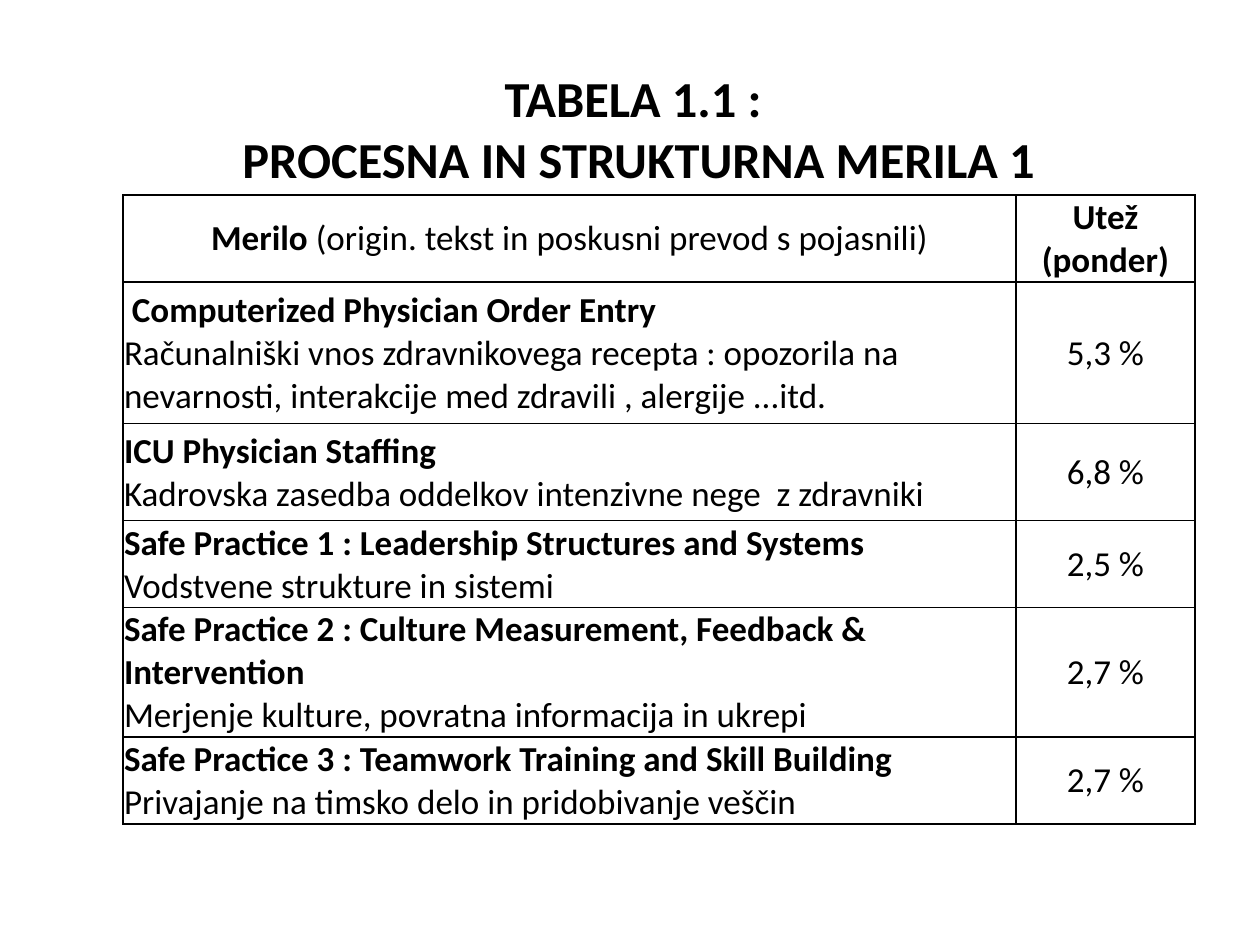
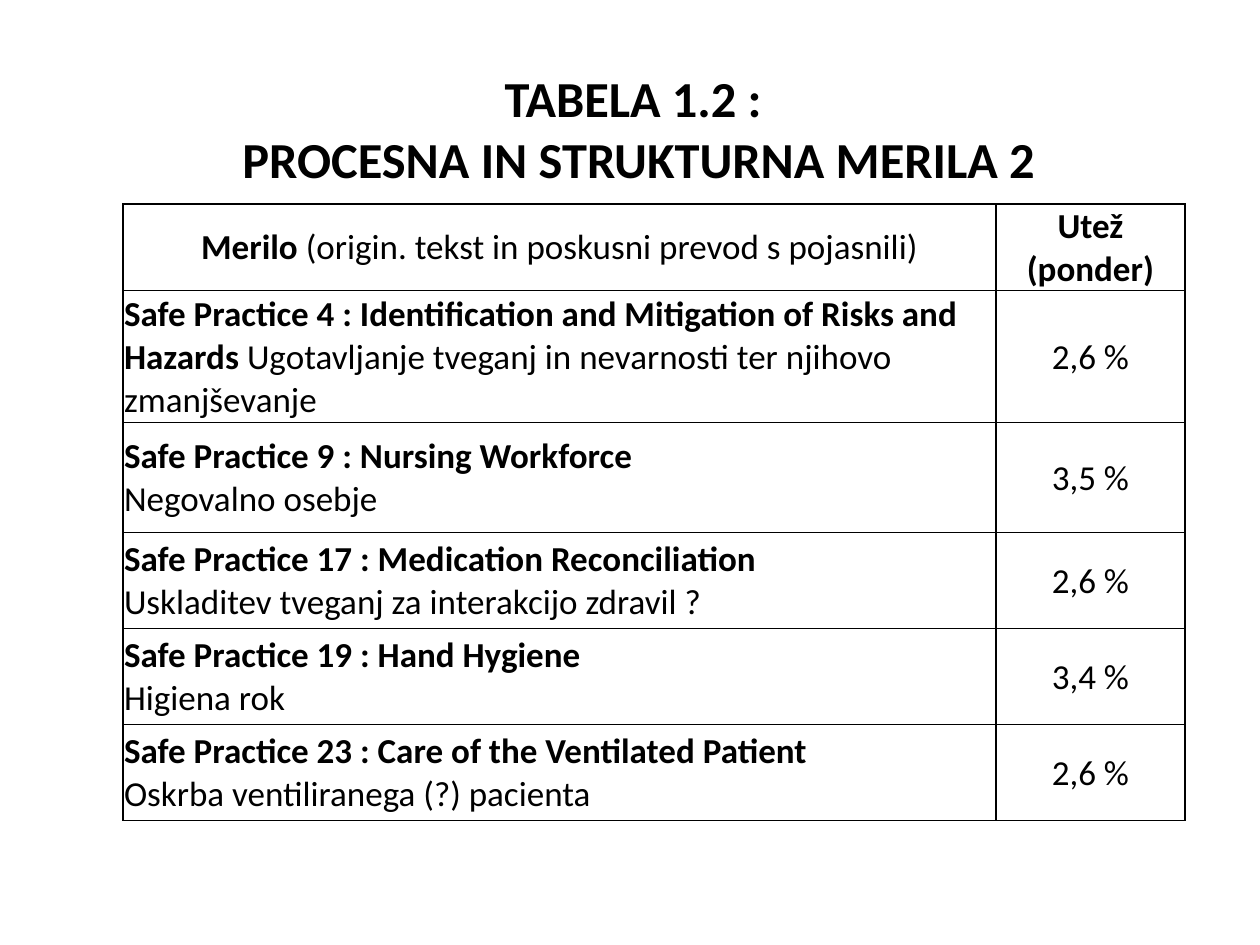
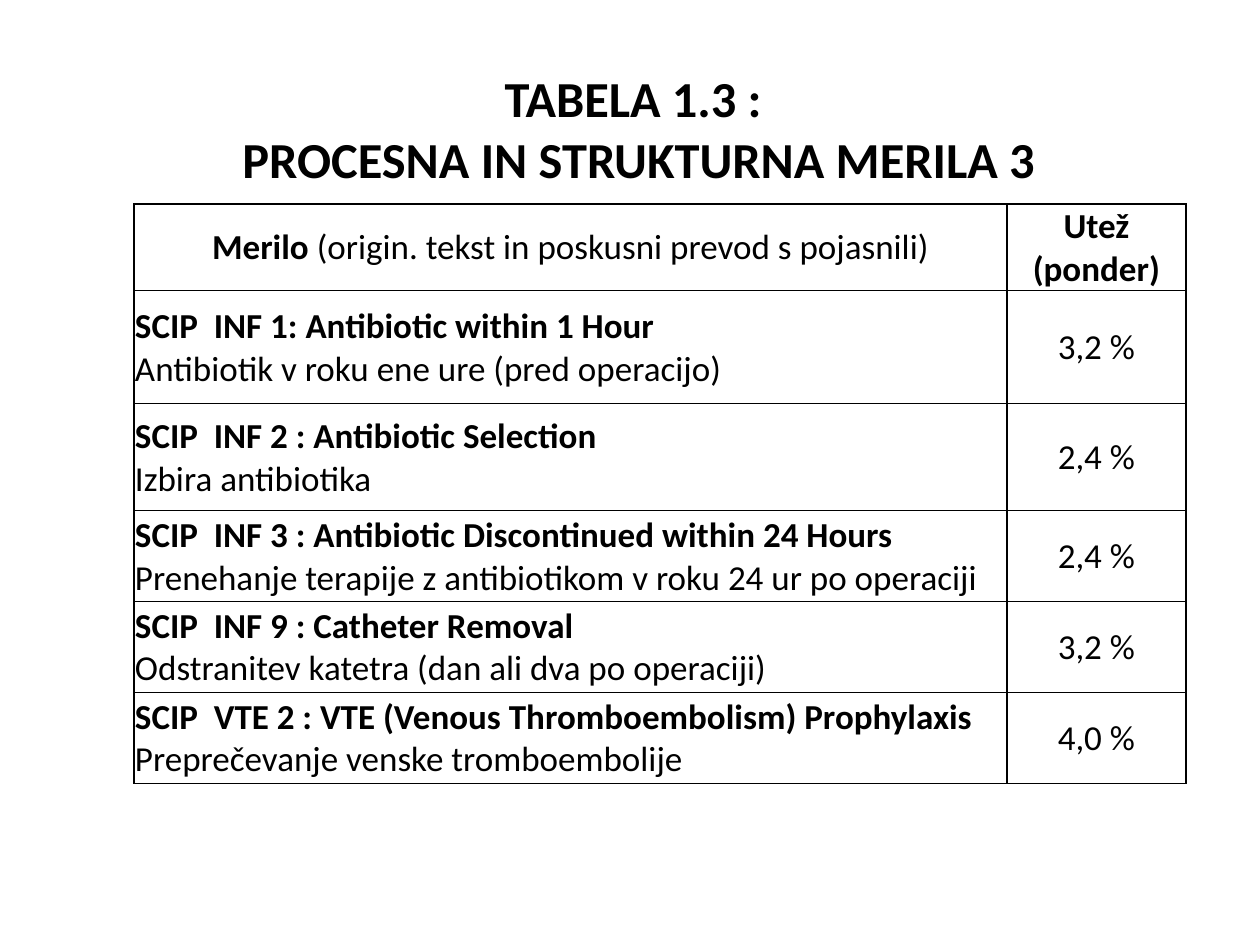
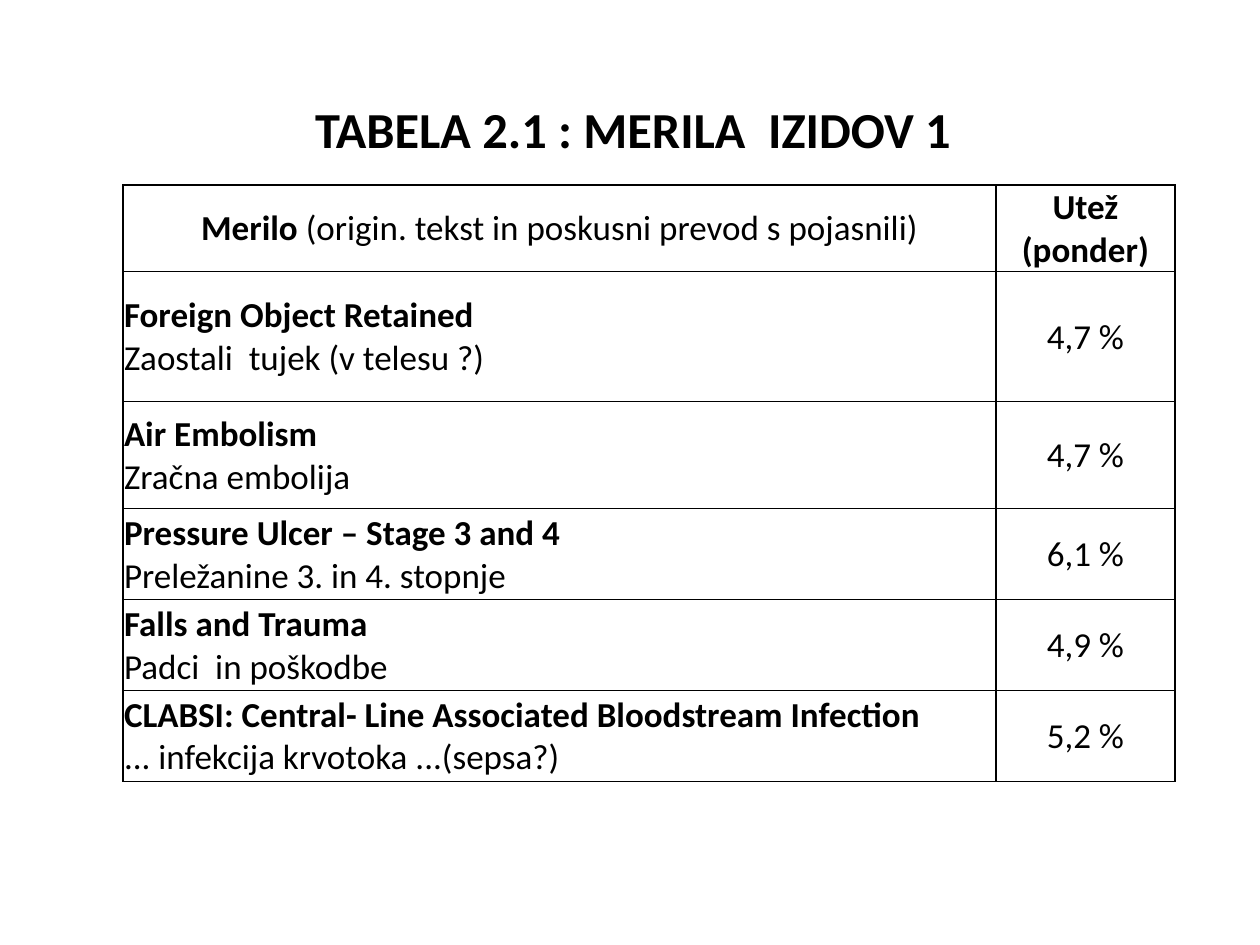
"""Build four slides of weighted hospital safety criteria tables."""
import lxml.etree
import pptx
import pptx.dml.color
import pptx.enum.text
import pptx.oxml.ns
import pptx.util

PX = pptx.util.Inches(1) / 126
FONT = "Calibri"
BLACK = "000000"
CENTER = pptx.enum.text.PP_ALIGN.CENTER
LEFT = pptx.enum.text.PP_ALIGN.LEFT
MIDDLE = pptx.enum.text.MSO_ANCHOR.MIDDLE


def px(length):
    return pptx.util.Emu(round(length * PX))


def color(code):
    return pptx.dml.color.RGBColor.from_string(code)


class Deck:
    def __init__(self):
        self.presentation = pptx.Presentation()
        self.presentation.slide_width = px(1260)
        self.presentation.slide_height = px(945)
        self.slide = None

    def add_slide(self):
        title_only = self.presentation.slide_layouts[5]
        self.slide = self.presentation.slides.add_slide(title_only)

    def style(self, paragraph, size, align, bold=None):
        paragraph.alignment = align
        font = paragraph.font
        font.name, font.size, font.bold = FONT, pptx.util.Pt(size), bold
        font.color.rgb = color(BLACK)

    def title(self, text):
        heading = self.slide.shapes.title
        heading.left, heading.top = px(54), px(94)
        heading.width, heading.height = px(1170), px(68)
        frame = heading.text_frame
        frame.text = text
        frame.auto_size = pptx.enum.text.MSO_AUTO_SIZE.NONE
        frame.vertical_anchor = MIDDLE
        self.style(frame.paragraphs[0], 28.8, CENTER, True)

    def borders(self, cell):
        properties = cell._tc.get_or_add_tcPr()
        qn = pptx.oxml.ns.qn
        for side in ("a:lnL", "a:lnR", "a:lnT", "a:lnB"):
            line = lxml.etree.SubElement(properties, qn(side), w=str(pptx.util.Pt(1)))
            fill = lxml.etree.SubElement(line, qn("a:solidFill"))
            lxml.etree.SubElement(fill, qn("a:srgbClr"), val=BLACK)

    def cell(self, cell, paragraphs, align):
        self.borders(cell)
        cell.fill.background()
        cell.vertical_anchor = MIDDLE
        cell.margin_left = cell.margin_right = cell.margin_top = px(1)
        cell.margin_bottom = 0
        frame = cell.text_frame
        for index, runs in enumerate(paragraphs):
            paragraph = frame.add_paragraph() if index else frame.paragraphs[0]
            shared = runs[0][1] if len(runs) == 1 else None
            self.style(paragraph, 20, align, shared)
            for text, bold in runs:
                run = paragraph.add_run()
                run.text = text
                if shared is None:
                    run.font.bold = bold

    def table(self, left, top, height, widths, heights, criteria):
        frame = self.slide.shapes.add_table(
            len(heights), len(widths), px(left), px(top), px(sum(widths)), px(height))
        table = frame.table
        table.first_row = table.horz_banding = False
        for column, width in zip(table.columns, widths):
            column.width = px(width)
        for row, row_height in zip(table.rows, heights):
            row.height = px(row_height)
        frame.height = px(height)
        for index, (criterion, weight) in enumerate([HEADER] + criteria):
            self.cell(table.cell(index, 0), criterion, LEFT if index else CENTER)
            self.cell(table.cell(index, 1), [[(weight, index == 0)]], CENTER)


def entry(english, slovene, weight):
    return [[(english, True)], [(slovene, False)]], weight


def inline_entry(english, slovene, weight):
    return [[(english, True), (slovene, False)]], weight


HEADER = inline_entry(
    "Merilo ", "(origin. tekst in poskusni prevod s pojasnili)", "Utež (ponder)")

TABLES = [
    ("TABELA 1.1 : \vPROCESNA IN STRUKTURNA MERILA 1",
     123, 195, 625, (893, 179), (50, 142, 97, 83, 83, 83), [
         entry(" Computerized Physician Order Entry",
               "Računalniški vnos zdravnikovega recepta : opozorila na nevarnosti, "
               "interakcije med zdravili , alergije ...itd.", "5,3 %"),
         entry("ICU Physician Staffing",
               "Kadrovska zasedba oddelkov intenzivne nege  z zdravniki", "6,8 %"),
         entry("Safe Practice 1 : Leadership Structures and Systems",
               "Vodstvene strukture in sistemi", "2,5 %"),
         entry("Safe Practice 2 : Culture Measurement, Feedback & Intervention",
               "Merjenje kulture, povratna informacija in ukrepi", "2,7 %"),
         entry("Safe Practice 3 : Teamwork Training and Skill Building",
               "Privajanje na timsko delo in pridobivanje veščin", "2,7 %"),
     ]),
    ("TABELA 1.2 : \vPROCESNA IN STRUKTURNA MERILA 2",
     123, 204, 614, (873, 189), (57, 132, 110, 96, 96, 96), [
         inline_entry("Safe Practice 4 : Identification and Mitigation of Risks and Hazards ",
                      "Ugotavljanje tveganj in nevarnosti ter njihovo zmanjševanje", "2,6 %"),
         entry("Safe Practice 9 : Nursing Workforce", "Negovalno osebje", "3,5 %"),
         entry("Safe Practice 17 : Medication Reconciliation",
               "Uskladitev tveganj za interakcijo zdravil ?", "2,6 %"),
         entry("Safe Practice 19 : Hand Hygiene", "Higiena rok", "3,4 %"),
         entry("Safe Practice 23 : Care of the Ventilated Patient",
               "Oskrba ventiliranega (?) pacienta", "2,6 %"),
     ]),
    ("TABELA 1.3 : \vPROCESNA IN STRUKTURNA MERILA 3",
     134, 204, 578, (873, 179), (55, 113, 107, 91, 91, 91), [
         entry("SCIP  INF 1: Antibiotic within 1 Hour",
               "Antibiotik v roku ene ure (pred operacijo)", "3,2 %"),
         entry("SCIP  INF 2 : Antibiotic Selection", "Izbira antibiotika", "2,4 %"),
         entry("SCIP  INF 3 : Antibiotic Discontinued within 24 Hours",
               "Prenehanje terapije z antibiotikom v roku 24 ur po operaciji", "2,4 %"),
         entry("SCIP  INF 9 : Catheter Removal",
               "Odstranitev katetra (dan ali dva po operaciji)", "3,2 %"),
         entry("SCIP  VTE 2 : VTE (Venous Thromboembolism) Prophylaxis",
               "Preprečevanje venske tromboembolije", "4,0 %"),
     ]),
    ("TABELA 2.1 : MERILA  IZIDOV 1 ",
     123, 185, 596, (873, 179), (55, 130, 107, 91, 91, 91), [
         entry("Foreign Object Retained", "Zaostali  tujek (v telesu ?)", "4,7 %"),
         entry("Air Embolism", "Zračna embolija", "4,7 %"),
         entry("Pressure Ulcer – Stage 3 and 4", "Preležanine 3. in 4. stopnje", "6,1 %"),
         entry("Falls and Trauma", "Padci  in poškodbe", "4,9 %"),
         entry("CLABSI: Central- Line Associated Bloodstream Infection",
               "... infekcija krvotoka ...(sepsa?)", "5,2 %"),
     ]),
]


def main():
    deck = Deck()
    for title, *layout in TABLES:
        deck.add_slide()
        deck.title(title)
        deck.table(*layout)
    deck.presentation.save("out.pptx")


if __name__ == "__main__":
    main()
